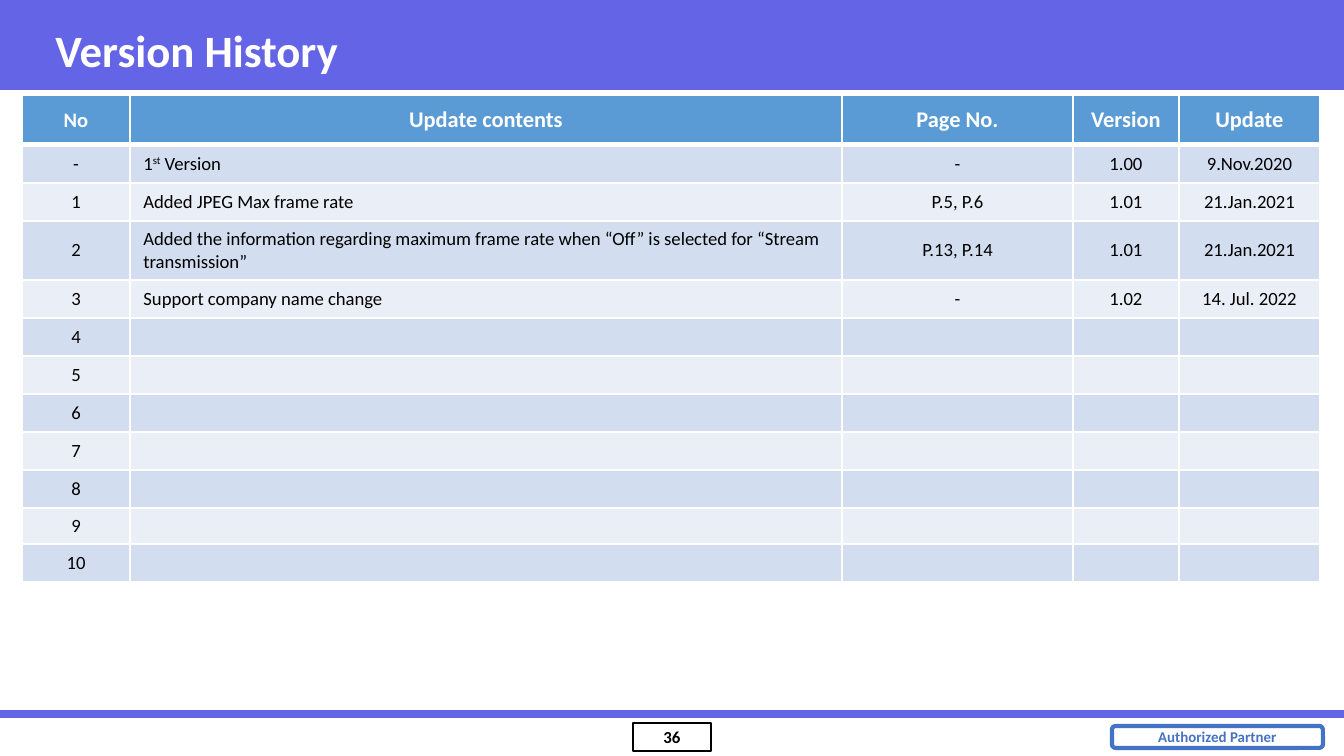
from dataclasses import dataclass

from lxml import etree
from pptx import Presentation
from pptx.dml.color import RGBColor
from pptx.enum.shapes import MSO_CONNECTOR, MSO_SHAPE
from pptx.enum.text import MSO_ANCHOR, PP_ALIGN
from pptx.oxml.ns import qn
from pptx.util import Emu, Pt

CENTER, LEFT = PP_ALIGN.CENTER, PP_ALIGN.LEFT
MIDDLE = MSO_ANCHOR.MIDDLE
RECTANGLE, ROUNDED = MSO_SHAPE.RECTANGLE, MSO_SHAPE.ROUNDED_RECTANGLE
STRAIGHT = MSO_CONNECTOR.STRAIGHT

SLIDE_WIDTH, SLIDE_HEIGHT = 1344, 756
TITLE_ONLY_LAYOUT = 5


@dataclass(frozen=True)
class Theme:
    """Colours, type sizes and font of the slide."""
    font: str = "Calibri"
    violet: str = "6464E6"
    blue: str = "4472C4"
    header: str = "5B9BD5"
    bands: tuple = ("D2DEEF", "EAEFF7")
    black: str = "000000"
    white: str = "FFFFFF"
    title_size: int = 24
    header_size: int = 12
    number_header_size: int = 11
    body_size: int = 10
    page_size: int = 9
    badge_size: int = 8


THEME = Theme()

COLUMN_WIDTHS = (108, 712, 231, 106, 141)
ROW_HEIGHTS = (50, 38, 38, 59) + (38,) * 6 + (36, 38)
HEADINGS = ("No", "Update contents", "Page No.", "Version", "Update")
HISTORY = [
    ("-", "1^st^ Version", "-", "1.00", "9.Nov.2020"),
    ("1", "Added JPEG Max frame rate", "P.5, P.6", "1.01", "21.Jan.2021"),
    ("2", "Added the information regarding maximum frame rate when “Off” is "
     "selected for “Stream transmission”", "P.13, P.14", "1.01", "21.Jan.2021"),
    ("3", "Support company name change", "-", "1.02", "14. Jul. 2022"),
] + [(str(number), "", "", "", "") for number in range(4, 11)]


def px(length):
    """Turn whole pixels into EMU."""
    return Emu(round(length * 914400 / 134.4))


def color(value):
    """Turn a hex string into a colour."""
    return RGBColor.from_string(value)


def format_runs(paragraph, size, text_color, bold, alignment):
    """Give every run of a paragraph the same look."""
    paragraph.alignment = alignment
    for run in paragraph.runs:
        run.font.name = THEME.font
        run.font.size = Pt(size)
        run.font.bold = bold
        run.font.color.rgb = color(text_color)


def add_box(slide, preset, box, fill=None, line=None, line_width=1):
    """Add a preset shape with an optional fill and outline."""
    shape = slide.shapes.add_shape(preset, *map(px, box))
    shape.shadow.inherit = False
    if fill:
        shape.fill.solid()
        shape.fill.fore_color.rgb = color(fill)
    else:
        shape.fill.background()
    if line:
        shape.line.color.rgb = color(line)
        shape.line.width = Pt(line_width)
    else:
        shape.line.fill.background()
    return shape


def add_label(shape, text, size, text_color):
    """Write a bold centred label inside a shape."""
    frame = shape.text_frame
    frame.text = text
    frame.word_wrap = False
    frame.vertical_anchor = MIDDLE
    frame.margin_left = frame.margin_right = px(4)
    frame.margin_top = frame.margin_bottom = px(4)
    format_runs(frame.paragraphs[0], size, text_color, True, CENTER)


def add_heading(slide, box, text):
    """Place the title over a coloured band."""
    left, top, width, height = box
    band = add_box(slide, RECTANGLE, box, fill=THEME.violet)
    title = slide.shapes.title
    title.element.addprevious(band.element)
    title.left, title.top = px(left + 42), px(top + 11)
    title.width, title.height = px(width - 100), px(height - 12)
    frame = title.text_frame
    frame.text = text
    frame.word_wrap = True
    frame.vertical_anchor = MIDDLE
    format_runs(frame.paragraphs[0], THEME.title_size, THEME.white, True, LEFT)


def set_borders(cell, top_width, bottom_width):
    """Draw white lines round a cell."""
    properties = cell._tc.get_or_add_tcPr()
    widths = {"a:lnL": 1, "a:lnR": 1, "a:lnT": top_width, "a:lnB": bottom_width}
    for tag, width in widths.items():
        line = etree.SubElement(properties, qn(tag), w=str(Pt(width)))
        fill = etree.SubElement(line, qn("a:solidFill"))
        etree.SubElement(fill, qn("a:srgbClr"), val=THEME.white)


def fill_cell(cell, text, fill, size, text_color, bold, alignment):
    """Fill a cell with text, where ^ marks enclose superscript."""
    cell.fill.solid()
    cell.fill.fore_color.rgb = color(fill)
    cell.vertical_anchor = MIDDLE
    paragraph = cell.text_frame.paragraphs[0]
    if not text:
        etree.SubElement(paragraph._p, qn("a:endParaRPr"), sz=str(size * 100))
        return
    for index, part in enumerate(text.split("^")):
        run = paragraph.add_run()
        run.text = part
        if index % 2:
            run.font._element.set("baseline", "30000")
    format_runs(paragraph, size, text_color, bold, alignment)


def add_history(slide, box):
    """Build the version table with a header and banded rows."""
    rows = [HEADINGS] + HISTORY
    table = slide.shapes.add_table(len(rows), len(HEADINGS), *map(px, box)).table
    for column, width in zip(table.columns, COLUMN_WIDTHS):
        column.width = px(width)
    for row_index, (row, height) in enumerate(zip(rows, ROW_HEIGHTS)):
        table.rows[row_index].height = px(height)
        for column_index, text in enumerate(row):
            cell = table.cell(row_index, column_index)
            set_borders(cell, 3 if row_index == 1 else 1, 3 if row_index == 0 else 1)
            if row_index == 0:
                size = THEME.header_size if column_index else THEME.number_header_size
                fill_cell(cell, text, THEME.header, size, THEME.white, True, CENTER)
            else:
                alignment = LEFT if column_index == 1 else CENTER
                band = THEME.bands[(row_index - 1) % 2]
                fill_cell(cell, text, band, THEME.body_size, THEME.black, False, alignment)


def add_footer(slide, box, page, badge_text):
    """Draw the rule, the page number and the badge."""
    left, top, width, _ = box
    rule = slide.shapes.add_connector(
        STRAIGHT, px(left), px(top), px(left + width), px(top))
    rule.line.color.rgb = color(THEME.violet)
    rule.line.width = Pt(4.5)
    etree.SubElement(rule.element.spPr, qn("a:effectLst"))
    page_box = add_box(slide, RECTANGLE, (left + 633, top + 9, 78, 28), line=THEME.black)
    add_label(page_box, page, THEME.page_size, THEME.black)
    badge = add_box(slide, ROUNDED, (left + 1112, top + 12, 211, 22),
                    line=THEME.blue, line_width=2.25)
    add_label(badge, badge_text, THEME.badge_size, THEME.blue)


def main():
    """Build and save the slide."""
    presentation = Presentation()
    presentation.slide_width = px(SLIDE_WIDTH)
    presentation.slide_height = px(SLIDE_HEIGHT)
    slide = presentation.slides.add_slide(presentation.slide_layouts[TITLE_ONLY_LAYOUT])
    add_heading(slide, (0, 0, SLIDE_WIDTH, 90), "Version History")
    add_footer(slide, (0, 714, SLIDE_WIDTH, 42), "36", "Authorized Partner")
    add_history(slide, (22, 95, sum(COLUMN_WIDTHS), sum(ROW_HEIGHTS)))
    presentation.save("out.pptx")


if __name__ == "__main__":
    main()
